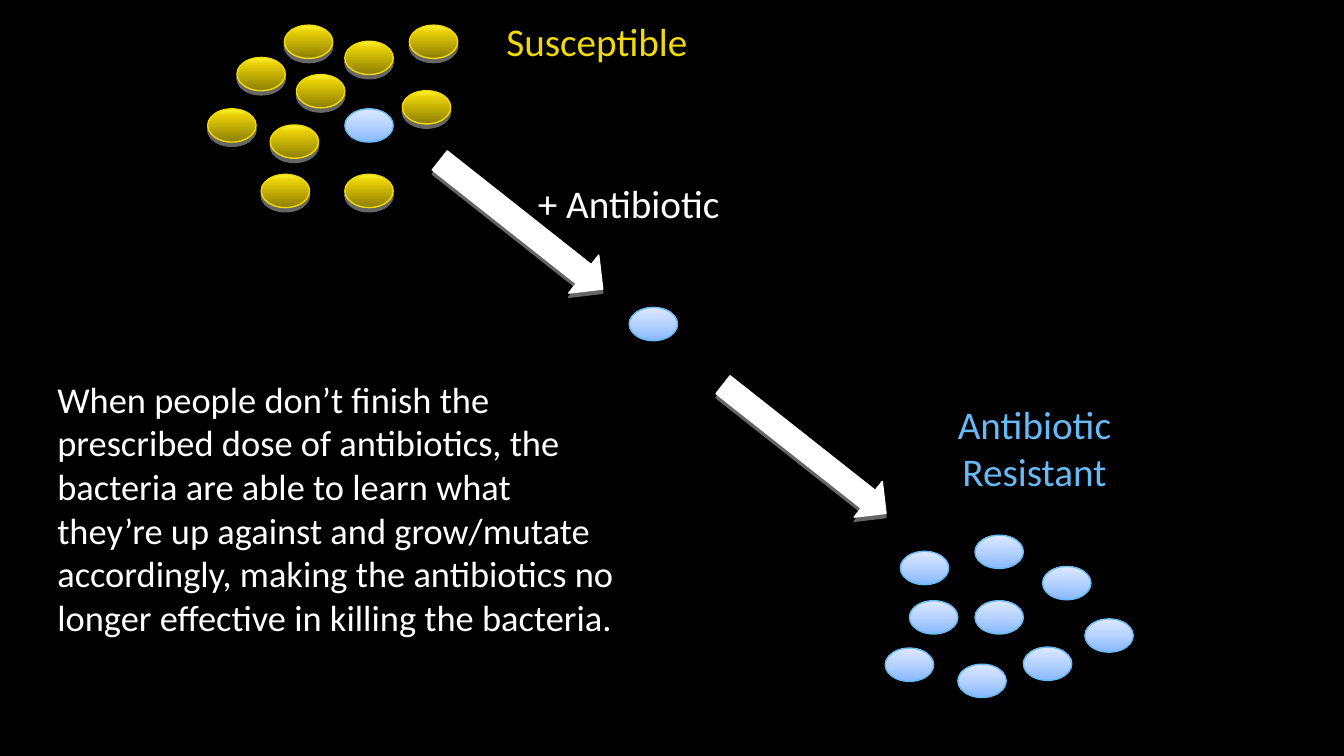
from lxml import etree
from pptx import Presentation
from pptx.dml.color import RGBColor
from pptx.enum.shapes import MSO_SHAPE
from pptx.enum.text import MSO_AUTO_SIZE, PP_ALIGN
from pptx.oxml.ns import qn
from pptx.util import Inches, Pt

ELLIPSE, RIGHT_ARROW = MSO_SHAPE.OVAL, MSO_SHAPE.RIGHT_ARROW
LEFT, CENTER = PP_ALIGN.LEFT, PP_ALIGN.CENTER
FIT_SHAPE = MSO_AUTO_SIZE.SHAPE_TO_FIT_TEXT

COLORS = {
    "background": "000000",
    "white": "FFFFFF",
    "yellow": "F2D908",
    "yellow_line": "F2D902",
    "blue": "67BAF6",
    "grey_shadow": "808080",
    "black_shadow": "000000",
}
FONT = "Calibri"
CELL_WIDTH, CELL_HEIGHT = 0.48, 0.33

# Gradient stops, angle, line colour, shadow colour and shadow blur
SUSCEPTIBLE = ([(0, "FFF834"), (20, "E7CF07"), (100, "8D7E02")], 90,
               "yellow_line", "grey_shadow", 0)
RESISTANT = ([(0, "86B8FF"), (50, "B6D2FF"), (100, "DCE8FF")], 270,
             "blue", "black_shadow", 5)

SUSCEPTIBLE_CELLS = [(2.35, 0.57), (2.06, 1.08), (2.82, 0.25), (2.94, 0.74),
                     (2.68, 1.24), (2.59, 1.73), (3.99, 0.9), (3.42, 0.41),
                     (3.42, 1.73), (4.06, 0.25)]
RESISTANT_CELLS = [(8.93, 5.47), (9.02, 5.96), (8.78, 6.43), (9.5, 6.59),
                   (10.34, 5.62), (9.67, 5.31), (9.67, 5.96), (10.15, 6.42),
                   (10.76, 6.14)]
EXPLANATION = (
    "When people don’t finish the prescribed dose of antibiotics, the "
    "bacteria are able to learn what they’re up against and grow/mutate "
    "accordingly, making the antibiotics no longer effective in killing "
    "the bacteria.")


def color(name):
    return RGBColor.from_string(COLORS[name])


def add_color_element(parent, value):
    return etree.SubElement(parent, qn("a:srgbClr"), val=value)


def set_gradient(shape, stops, angle):
    shape.fill.gradient()
    shape.fill.gradient_angle = 0
    gradient = shape._element.spPr.find(qn("a:gradFill"))
    stop_list = gradient.find(qn("a:gsLst"))
    for stop in list(stop_list):
        stop_list.remove(stop)
    for position, value in stops:
        stop = etree.SubElement(stop_list, qn("a:gs"), pos=str(position * 1000))
        add_color_element(stop, value)
    gradient.find(qn("a:lin")).set("ang", str(angle * 60000))


def set_line_and_shadow(shape, line, shadow, blur):
    """Give a 1 pt outline and an 80% shadow falling 3 pt downwards."""
    shape.line.color.rgb = color(line)
    shape.line.width = Pt(1)
    shape.shadow.inherit = False
    effects = shape._element.spPr.find(qn("a:effectLst"))
    outer = etree.SubElement(effects, qn("a:outerShdw"), blurRad=str(Pt(blur)),
                             dist=str(Pt(3)), dir="5400000")
    shadow_color = add_color_element(outer, COLORS[shadow])
    etree.SubElement(shadow_color, qn("a:alpha"), val="80000")


def add_cell(shapes, left, top, kind):
    stops, angle, line, shadow, blur = kind
    cell = shapes.add_shape(ELLIPSE, Inches(left), Inches(top),
                            Inches(CELL_WIDTH), Inches(CELL_HEIGHT))
    set_gradient(cell, stops, angle)
    set_line_and_shadow(cell, line, shadow, blur)


def add_arrow(shapes, left, top, height):
    arrow = shapes.add_shape(RIGHT_ARROW, Inches(left), Inches(top),
                             Inches(2.06), Inches(height))
    arrow.rotation = 38.3
    arrow.fill.solid()
    arrow.fill.fore_color.rgb = color("white")
    set_line_and_shadow(arrow, "white", "grey_shadow", 0)


def add_text(shapes, box, text, size, color_name, alignment=CENTER):
    text_frame = shapes.add_textbox(*map(Inches, box)).text_frame
    text_frame.word_wrap = True
    text_frame.auto_size = FIT_SHAPE
    text_frame.text = text
    paragraph = text_frame.paragraphs[0]
    paragraph.alignment = alignment
    font = paragraph.runs[0].font
    font.name = FONT
    font.size = Pt(size)
    font.color.rgb = color(color_name)


def main():
    presentation = Presentation()
    presentation.slide_width = Inches(13.33)
    presentation.slide_height = Inches(7.5)
    slide = presentation.slides.add_slide(presentation.slide_layouts[6])
    slide.background.fill.solid()
    slide.background.fill.fore_color.rgb = color("background")
    shapes = slide.shapes

    add_arrow(shapes, 6.95, 4.23, 0.45)

    first_colony = shapes.add_group_shape().shapes
    for left, top in SUSCEPTIBLE_CELLS:
        add_cell(first_colony, left, top, SUSCEPTIBLE)
    add_cell(first_colony, 3.42, 1.08, RESISTANT)
    add_text(first_colony, (4.8, 0.12, 2.24, 0.57), "Susceptible", 28, "yellow")

    treatment = shapes.add_group_shape().shapes
    add_arrow(treatment, 4.14, 1.99, 0.48)
    add_text(treatment, (5.15, 1.73, 2.17, 0.57), "+ Antibiotic", 28, "white")

    add_cell(shapes, 6.24, 3.05, RESISTANT)

    final_colony = shapes.add_group_shape().shapes
    add_text(final_colony, (9.14, 3.92, 2.24, 1.04), "Antibiotic Resistant",
             28, "blue")
    for left, top in RESISTANT_CELLS:
        add_cell(final_colony, left, top, RESISTANT)

    add_text(shapes, (0.47, 3.69, 5.82, 3.16), EXPLANATION, 26, "white", LEFT)
    presentation.save("out.pptx")


if __name__ == "__main__":
    main()
